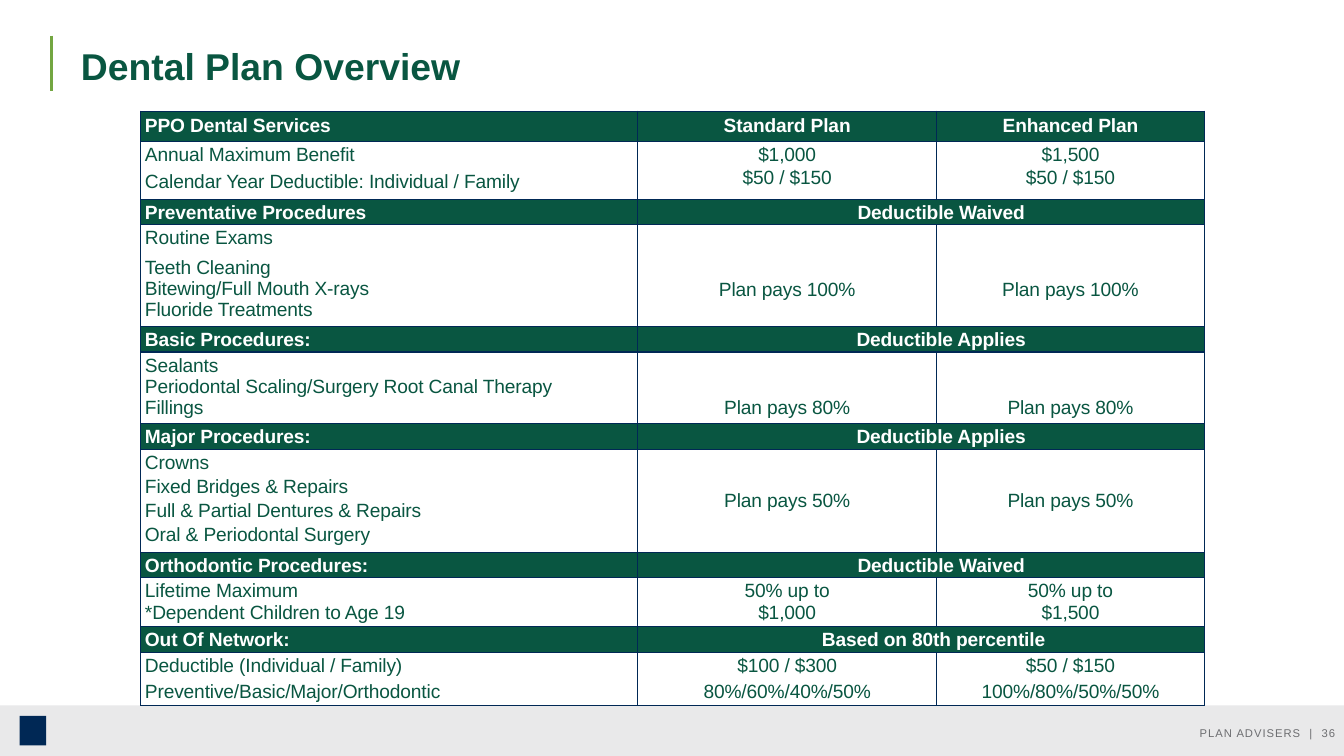
from pptx import Presentation
from pptx.dml.color import RGBColor
from pptx.enum import shapes as sh, text as tx
from pptx.oxml import parse_xml
from pptx.oxml.ns import nsdecls
from pptx.util import Inches, Pt

GREEN = RGBColor(0x09, 0x56, 0x41)
LIME = RGBColor(0x73, 0xA6, 0x41)
NAVY = RGBColor(0x00, 0x28, 0x55)
PALE = RGBColor(0xE9, 0xE9, 0xEA)
GREY = RGBColor(0x6D, 0x6E, 0x71)
WHITE = RGBColor(0xFF, 0xFF, 0xFF)

TOP, MID, LOW = tx.MSO_ANCHOR.TOP, tx.MSO_ANCHOR.MIDDLE, tx.MSO_ANCHOR.BOTTOM
LEFT, MIDST, RIGHT = tx.PP_ALIGN.LEFT, tx.PP_ALIGN.CENTER, tx.PP_ALIGN.RIGHT

COLS = [5.59, 3.36, 3.01]
# Height, cell texts, anchor of the plan cells, space between paragraphs
ROWS = [
    (0.34, ["PPO Dental Services", "Standard Plan", "Enhanced Plan"], MID, 0),
    (0.27, ["Annual Maximum Benefit\nCalendar Year Deductible: Individual / Family",
            "$1,000", "$1,500"], TOP, 4.5),
    (0.36, ["", "$50 / $150", "$50 / $150"], TOP, 0),
    (0.29, ["Preventative Procedures", "Deductible Waived"], TOP, 0),
    (0.29, ["Routine Exams", "", ""], TOP, 0),
    (0.81, ["Teeth Cleaning\nBitewing/Full Mouth X-rays\nFluoride Treatments",
            "Plan pays 100%", "Plan pays 100%"], MID, 0),
    (0.29, ["Basic Procedures:", "Deductible Applies"], TOP, 0),
    (0.8, ["Sealants\nPeriodontal Scaling/Surgery Root Canal Therapy\nFillings",
           "Plan pays 80%", "Plan pays 80%"], LOW, 0),
    (0.29, ["Major Procedures:", "Deductible Applies"], TOP, 0),
    (1.15, ["Crowns\nFixed Bridges & Repairs\nFull & Partial Dentures & Repairs\n"
            "Oral & Periodontal Surgery", "Plan pays 50%", "Plan pays 50%"], MID, 2.2),
    (0.29, ["Orthodontic Procedures:", "Deductible Waived"], TOP, 0),
    (0.55, ["Lifetime Maximum\n*Dependent Children to Age 19",
            "50% up to\n$1,000", "50% up to\n$1,500"], TOP, 0),
    (0.29, ["Out Of Network:", "Based on 80th percentile"], TOP, 0),
    (0.29, ["Deductible (Individual / Family)", "$100 / $300", "$50 / $150"], TOP, 0),
    (0.3, ["Preventive/Basic/Major/Orthodontic",
           "80%/60%/40%/50%", "100%/80%/50%/50%"], TOP, 0),
]
JOINED = {2, 5, 14}  # rows with no rule above them


def style(para, size, color, bold=False, track=0):
    for run in para.runs:
        font = run.font
        font.name, font.size, font.bold = "Arial", Pt(size), bold
        font.color.rgb = color
        run._r.get_or_add_rPr().set("spc", str(track))


def block(slide, x, y, w, h, color):
    box = slide.shapes.add_shape(sh.MSO_SHAPE.RECTANGLE,
                                 Inches(x), Inches(y), Inches(w), Inches(h))
    box.shadow.inherit = False
    box.fill.solid()
    box.fill.fore_color.rgb = color
    box.line.fill.background()


def header(slide, x, y):
    rule = slide.shapes.add_connector(sh.MSO_CONNECTOR.STRAIGHT, Inches(x), Inches(y),
                                      Inches(x), Inches(y + 0.62))
    rule.line.color.rgb = LIME
    rule.line.width = Pt(2)
    rule._element.spPr.append(parse_xml(f"<a:effectLst {nsdecls('a')}/>"))
    title = slide.shapes.title
    title.left, title.top = Inches(x + 0.23), Inches(y + 0.1)
    title.width, title.height = Inches(5.17), Inches(0.48)
    frame = title.text_frame
    frame.text = "Dental Plan Overview"
    frame.vertical_anchor = MID
    frame.auto_size = tx.MSO_AUTO_SIZE.NONE
    frame.paragraphs[0].alignment = LEFT
    style(frame.paragraphs[0], 30.2, GREEN, True)


def footer(slide, y, w):
    block(slide, 0, y, w, 0.58, PALE)
    block(slide, 0.22, y + 0.12, 0.3, 0.33, NAVY)
    note = slide.shapes.add_textbox(Inches(w - 3.4), Inches(y + 0.13),
                                    Inches(3.4), Inches(0.36))
    frame = note.text_frame
    frame.word_wrap = True
    frame.vertical_anchor = MID
    frame.text = "PLAN ADVISERS  |  36"
    frame.paragraphs[0].alignment = RIGHT
    style(frame.paragraphs[0], 9.1, GREY, track=80)


def edges(cell, row):
    """Rule all sides of a cell, save those between joined rows."""
    bare = {"T": row in JOINED, "B": row + 1 in JOINED}
    for side in "LRTB":
        ink = ("<a:noFill/>" if bare.get(side) else
               f'<a:solidFill><a:srgbClr val="{NAVY}"/></a:solidFill>')
        cell._tc.get_or_add_tcPr().append(parse_xml(
            f'<a:ln{side} {nsdecls("a")} w="{Pt(1)}">{ink}</a:ln{side}>'))


def fill_cell(cell, words, band, first, gap):
    cell.fill.solid()
    cell.fill.fore_color.rgb = GREEN if band else WHITE
    cell.margin_left = Inches(0.05 if first else 0)
    cell.margin_right = 0
    cell.text_frame.text = words
    for i, para in enumerate(cell.text_frame.paragraphs):
        para.alignment = LEFT if first else MIDST
        if i and gap:
            para.space_before = Pt(gap)
        style(para, 15.5, WHITE if band else GREEN, band, -10)


def plans(slide, x, y):
    grid = slide.shapes.add_table(len(ROWS), len(COLS), Inches(x), Inches(y),
                                  Inches(sum(COLS)), Inches(sum(r[0] for r in ROWS))).table
    grid.first_row = grid.horz_banding = False
    for col, wide in zip(grid.columns, COLS):
        col.width = Inches(wide)
    for r, (tall, words, anchor, gap) in enumerate(ROWS):
        grid.rows[r].height = Inches(tall)
        merged = len(words) == 2
        band = merged or r == 0
        for c in range(len(COLS)):
            cell = grid.cell(r, c)
            edges(cell, r)
            fill_cell(cell, words[c] if c < len(words) else "", band, c == 0, gap)
            cell.vertical_anchor = anchor if c or band else TOP
            centred = cell.vertical_anchor == MID
            cell.margin_top = Inches(0 if centred or r == 2 else 0.03)
            cell.margin_bottom = Inches(0.06 if cell.vertical_anchor == LOW else 0)
        if merged:
            wide = grid.cell(r, 1)
            wide.merge(grid.cell(r, 2))
            wide.margin_left = Inches(0.28 if "Based" in words[1] else 0.45)
    grid.cell(1, 0).merge(grid.cell(2, 0))


def main():
    deck = Presentation()
    deck.slide_width, deck.slide_height = Inches(15.11), Inches(8.5)
    slide = deck.slides.add_slide(deck.slide_layouts[5])
    footer(slide, 7.93, 15.11)
    header(slide, 0.58, 0.4)
    plans(slide, 1.58, 1.25)
    deck.save("out.pptx")


if __name__ == "__main__":
    main()
